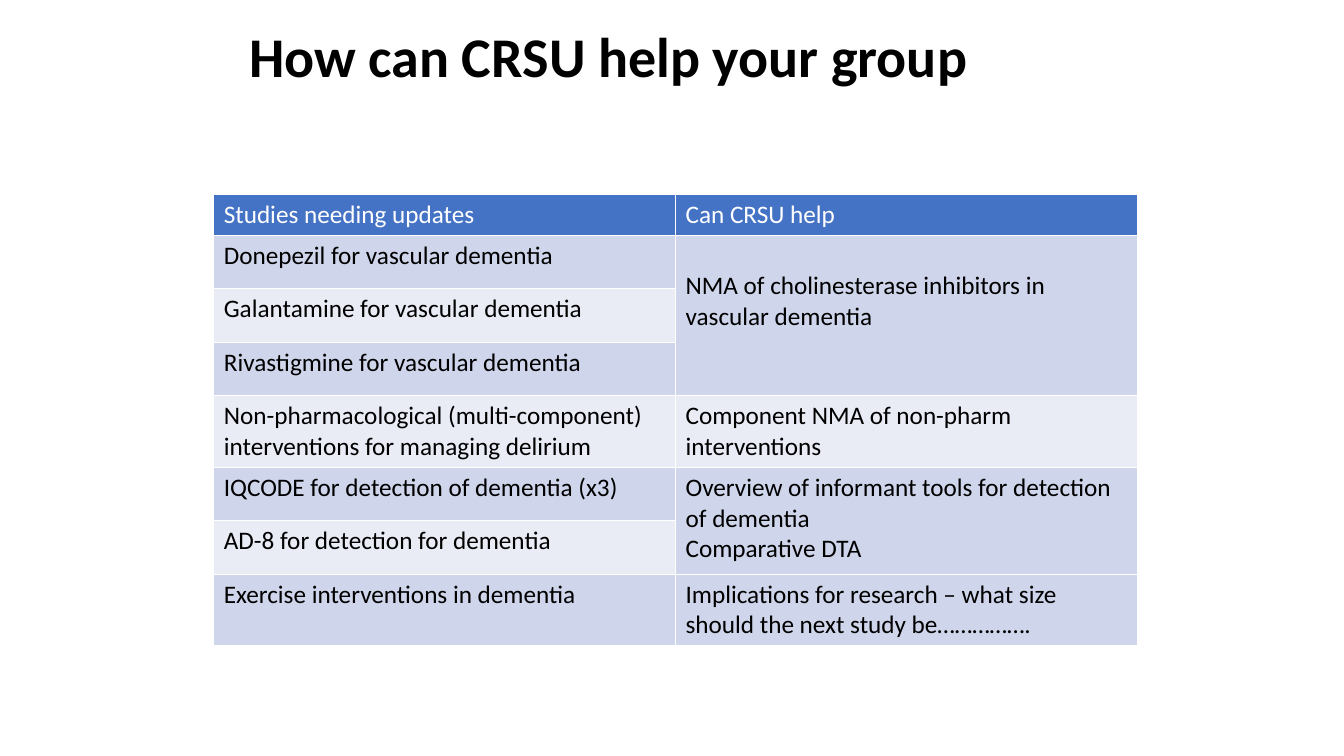
"""Build a slide with a table of dementia reviews and the help CRSU can offer."""
from pptx import Presentation
from pptx.dml.color import RGBColor
from pptx.enum.text import MSO_ANCHOR, PP_ALIGN
from pptx.util import Inches, Pt

COLORS = {
    "header": "4472C4",
    "dark_band": "CFD5EA",
    "light_band": "E9EBF5",
    "header_text": "FFFFFF",
    "text": "000000",
}


def format_runs(text_frame, size, color, bold):
    for paragraph in text_frame.paragraphs:
        for run in paragraph.runs:
            run.font.name = "Calibri"
            run.font.size = Pt(size)
            run.font.bold = bold
            run.font.color.rgb = RGBColor.from_string(COLORS[color])


presentation = Presentation()
presentation.slide_width = Inches(13.33)
presentation.slide_height = Inches(7.5)
slide = presentation.slides.add_slide(presentation.slide_layouts[5])

title = slide.shapes.title
title.left, title.top = Inches(2.37), Inches(0.1)
title.width, title.height = Inches(8.62), Inches(0.97)
title.text_frame.text = "How can CRSU help your group"
title.text_frame.vertical_anchor = MSO_ANCHOR.MIDDLE
title.text_frame.paragraphs[0].alignment = PP_ALIGN.LEFT
title.text_frame.paragraphs[0].line_spacing = 0.9
format_runs(title.text_frame, 40, "text", True)

rows = [
    (0.4, "Studies needing updates", "Can CRSU help"),
    (0.53, "Donepezil for vascular dementia",
     "NMA of cholinesterase inhibitors in vascular dementia"),
    (0.53, "Galantamine for vascular dementia", ""),
    (0.53, "Rivastigmine for vascular dementia", ""),
    (0.71, "Non-pharmacological (multi-component) interventions for managing delirium",
     "Component NMA of non-pharm interventions"),
    (0.53, "IQCODE for detection of dementia (x3)",
     "Overview of informant tools for detection of dementia\nComparative DTA"),
    (0.53, "AD-8 for detection for dementia", ""),
    (0.71, "Exercise interventions in dementia",
     "Implications for research – what size should the next study be……………."),
]
table_height = sum(row[0] for row in rows)
table = slide.shapes.add_table(
    len(rows), 2, Inches(2.12), Inches(1.93), Inches(9.16), Inches(table_height)
).table

for row_index, (height, *texts) in enumerate(rows):
    table.rows[row_index].height = Inches(height)
    if row_index == 0:
        fill, text_color = "header", "header_text"
    else:
        fill = "dark_band" if row_index % 2 else "light_band"
        text_color = "text"
    for column_index, text in enumerate(texts):
        cell = table.cell(row_index, column_index)
        cell.fill.solid()
        cell.fill.fore_color.rgb = RGBColor.from_string(COLORS[fill])
        cell.text_frame.text = text
        format_runs(cell.text_frame, 18, text_color, False)

for first_row, last_row in [(1, 3), (5, 6)]:
    table.cell(first_row, 1).merge(table.cell(last_row, 1))
table.cell(1, 1).margin_top = Inches(0.35)

presentation.save("out.pptx")
